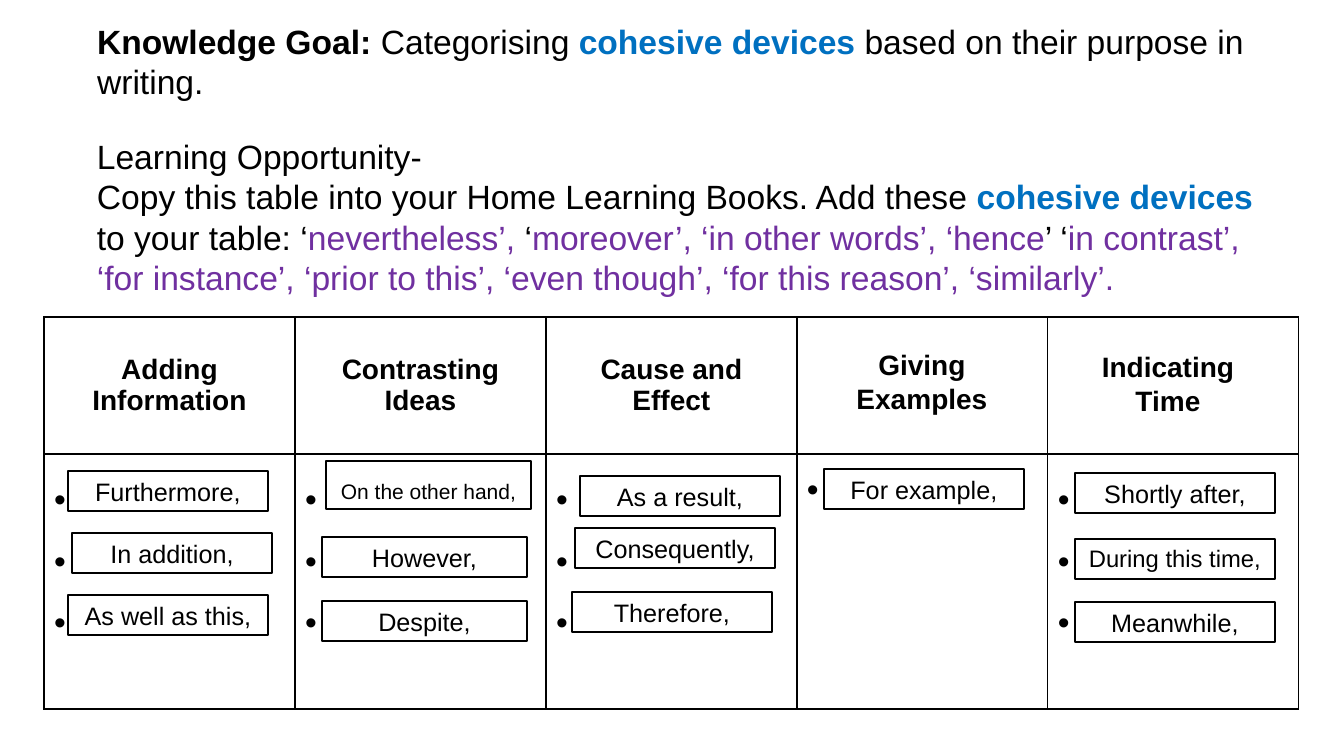
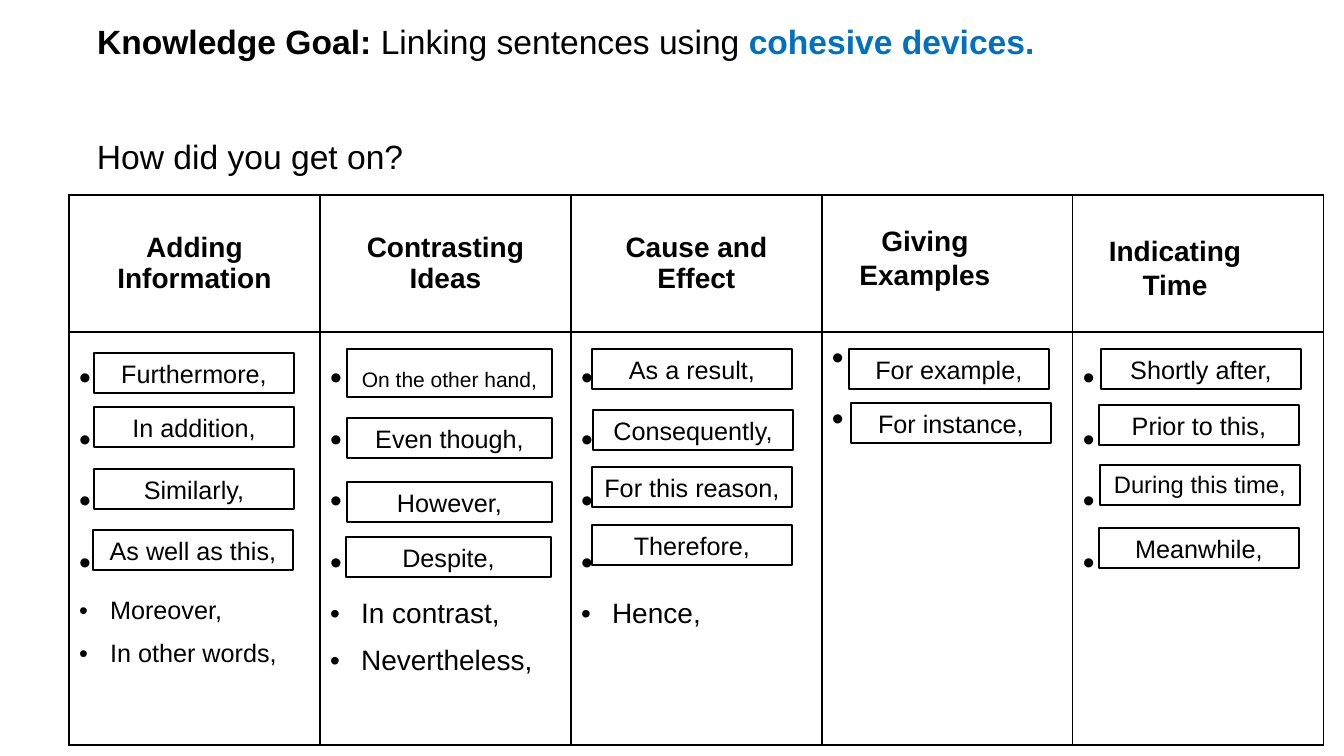
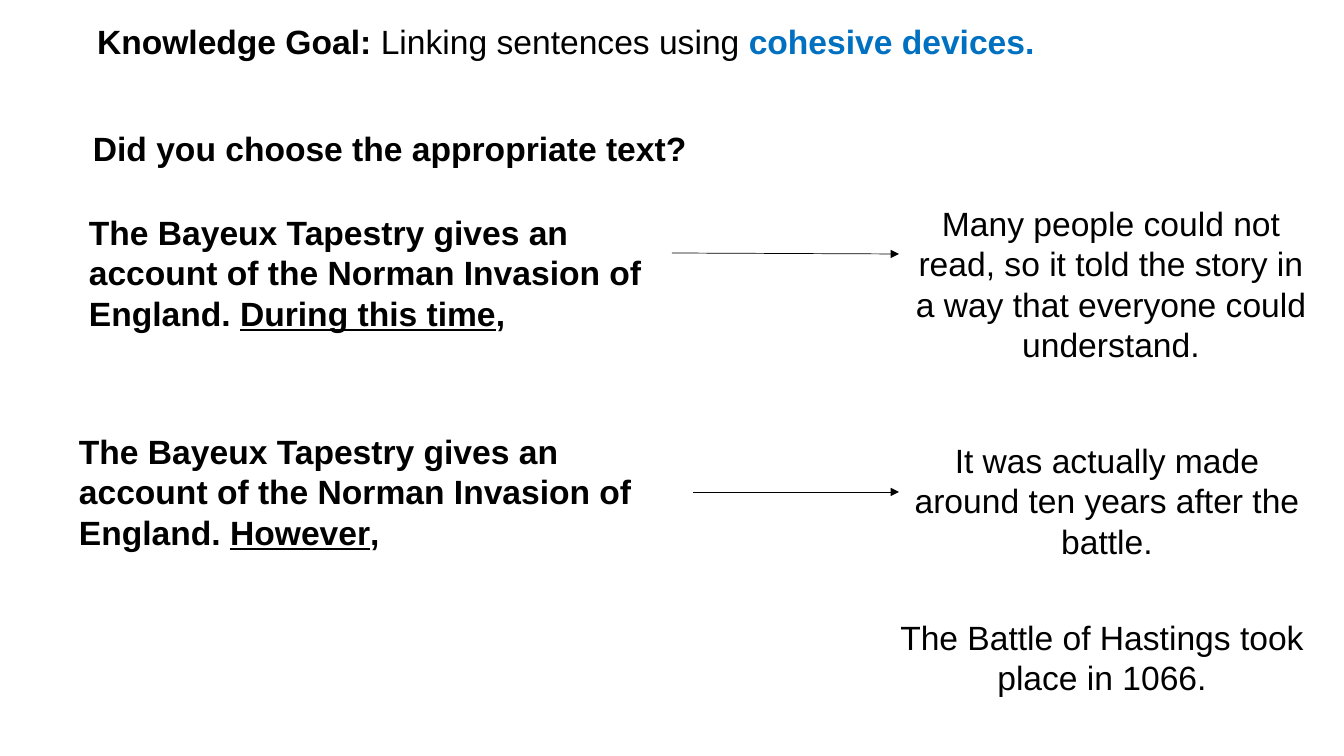
from lxml import etree
from pptx import Presentation
from pptx import util as u
from pptx.dml.color import RGBColor
from pptx.enum import shapes, text
from pptx.oxml.ns import qn

PX = 12192000 / 1344
COLORS = {"black": "000000", "white": "FFFFFF", "blue": "0070C0", "purple": "7030A0"}
FONT = "Arial"
BODY = 24
COLUMN, HEADER_ROW = 251, 137
HEADERS = ["Adding Information", "Contrasting Ideas", "Cause and\vEffect", "", ""]
WIDTHS = [200, 205, 200, 200, 200]
DEVICE_SIZES = {"On the other hand,": 15, "During this time,": 17}
BLUE = {"color": "blue", "bold": True}
PURPLE = {"color": "purple"}
LINKING_GOAL = [("Linking sentences using ", {}), ("cohesive devices.", BLUE)]


def px(n):
    return u.Emu(round(n * PX))


def box(*lengths):
    return [px(n) for n in lengths]


def rgb(name):
    return RGBColor.from_string(COLORS[name])


def style(font, size=None, name=None, color=None, bold=None, underline=None):
    if size:
        font.size = u.Pt(size)
    if name:
        font.name = name
    if color:
        font.color.rgb = rgb(color)
    if bold is not None:
        font.bold = bold
    if underline:
        font.underline = True


def write(p, runs, size=BODY, name=FONT, bold=False, align=text.PP_ALIGN.LEFT, spacing=None):
    p.alignment = align
    if spacing:
        p.line_spacing = spacing
    style(p.font, size, name, "black", bold)
    if isinstance(runs, str):
        p.text = runs
        return
    for words, changes in runs:
        r = p.add_run()
        r.text = words
        style(r.font, **changes)


def write_all(tf, paragraphs, **options):
    for i, runs in enumerate(paragraphs):
        write(tf.add_paragraph() if i else tf.paragraphs[0], runs, **options)


def add_goal(prs, runs, height=50):
    s = prs.slides.add_slide(prs.slide_layouts[5])
    sp = s.shapes.title
    sp.left, sp.top, sp.width, sp.height = box(87, 16, 1237, height)
    tf = sp.text_frame
    tf.word_wrap = True
    tf.auto_size = text.MSO_AUTO_SIZE.NONE
    tf.vertical_anchor = text.MSO_ANCHOR.TOP
    write(tf.paragraphs[0], [("Knowledge Goal: ", {"bold": True})] + runs)
    return s


def add_text(s, at, paragraphs, wrap=True, **options):
    tf = s.shapes.add_textbox(*box(*at)).text_frame
    tf.word_wrap = wrap
    tf.auto_size = text.MSO_AUTO_SIZE.SHAPE_TO_FIT_TEXT
    write_all(tf, paragraphs, **options)


def add_device(s, words, x, y, width):
    size = DEVICE_SIZES.get(words, 18)
    spaced = size == 15
    sp = s.shapes.add_shape(shapes.MSO_SHAPE.RECTANGLE, *box(x, y, width, 48 if spaced else 40))
    sp.shadow.inherit = False
    sp.fill.solid()
    sp.fill.fore_color.rgb = rgb("white")
    sp.line.color.rgb = rgb("black")
    sp.line.width = u.Pt(1)
    tf = sp.text_frame
    tf.word_wrap = True
    tf.auto_size = text.MSO_AUTO_SIZE.SHAPE_TO_FIT_TEXT
    tf.vertical_anchor = text.MSO_ANCHOR.TOP
    write(tf.paragraphs[0], words, size, align=text.PP_ALIGN.CENTER,
          spacing=1.5 if spaced else None)


def format_cell(cell):
    tc_pr = cell._tc.get_or_add_tcPr()
    for side in ("a:lnL", "a:lnR", "a:lnT", "a:lnB"):
        ln = etree.SubElement(tc_pr, qn(side), w=str(u.Pt(1)))
        fill = etree.SubElement(ln, qn("a:solidFill"))
        etree.SubElement(fill, qn("a:srgbClr"), val=COLORS["black"])
    cell.fill.solid()
    cell.fill.fore_color.rgb = rgb("white")


def add_bullet(p):
    p_pr = p._p.get_or_add_pPr()
    p_pr.set("marL", str(px(31)))
    p_pr.set("indent", str(-px(31)))
    etree.SubElement(p_pr, qn("a:buFont"), typeface=FONT)
    etree.SubElement(p_pr, qn("a:buChar"), char="•")


def fill_list(cell, count, extras, extra_size, first_spacing):
    tf = cell.text_frame
    for i, words in enumerate([" "] * count + extras):
        p = tf.add_paragraph() if i else tf.paragraphs[0]
        add_bullet(p)
        size, name = (BODY, "Calibri") if i < count else (extra_size, FONT)
        write(p, words, size, name, spacing=1.5 if i else first_spacing)


def add_device_table(s, left, top, list_row, columns, labels, extras, example_spacing):
    frame = s.shapes.add_table(2, len(columns), *box(left, top, COLUMN * len(columns),
                                                     HEADER_ROW + list_row))
    table = frame.table
    table.first_row = table.horz_banding = False
    for row, height in zip(table.rows, (HEADER_ROW, list_row)):
        row.height = px(height)
    for i, devices in enumerate(columns):
        table.columns[i].width = px(COLUMN)
        head, body = table.cell(0, i), table.cell(1, i)
        format_cell(head)
        format_cell(body)
        head.vertical_anchor = text.MSO_ANCHOR.MIDDLE
        if HEADERS[i]:
            write(head.text_frame.paragraphs[0], HEADERS[i], 20, bold=True,
                  align=text.PP_ALIGN.CENTER)
        words, size = extras.get(i, ([], None))
        fill_list(body, len(devices), words, size, example_spacing if i == 3 else 1.5)
    for devices, width in zip(columns, WIDTHS):
        for device in devices:
            add_device(s, *device, width)
    for (x, y, width), lines in zip(labels, (["Giving", "Examples"], ["Indicating", "Time"])):
        add_text(s, (x, y, width, 78), lines, wrap=False, size=20, bold=True,
                 align=text.PP_ALIGN.CENTER)


def add_arrow(s, x1, y1, x2, y2):
    c = s.shapes.add_connector(shapes.MSO_CONNECTOR.STRAIGHT, *box(x1, y1, x2, y2))
    c.line.color.rgb = rgb("black")
    c.line.width = u.Pt(0.5)
    etree.SubElement(c.line._get_or_add_ln(), qn("a:tailEnd"), type="triangle")
    etree.SubElement(c._element.spPr, qn("a:effectLst"))


def categorising_slide(prs):
    s = add_goal(prs, [("Categorising ", {}), ("cohesive devices ", BLUE),
                       ("based on their purpose in writing.", {})], 92)
    add_device_table(s, 44, 317, 255, [
        [("Furthermore,", 68, 471), ("In addition,", 72, 533), ("As well as this,", 68, 595)],
        [("On the other hand,", 326, 461), ("However,", 322, 537), ("Despite,", 322, 601)],
        [("As a result,", 580, 476), ("Consequently,", 575, 528), ("Therefore,", 572, 592)],
        [("For example,", 824, 469)],
        [("Shortly after,", 1075, 473), ("During this time,", 1075, 539),
         ("Meanwhile,", 1075, 602)],
    ], [(846, 343, 152), (1091, 345, 154)], {}, 1.25)
    add_text(s, (87, 131, 1213, 173), ["Learning Opportunity-", [
        ("Copy this table into your Home Learning Books. Add these ", {}),
        ("cohesive devices ", BLUE),
        ("to your table: ‘", {}),
        ("nevertheless’, ", PURPLE),
        ("‘", {}),
        ("moreover’, ‘in other words’, ‘hence", PURPLE),
        ("’ ‘", {}),
        ("in contrast’, ‘for instance’, ‘prior to this’, ‘even though’, "
         "‘for this reason’, ‘similarly’.", PURPLE),
    ]])


def answers_slide(prs):
    s = add_goal(prs, LINKING_GOAL)
    add_device_table(s, 69, 195, 413, [
        [("Furthermore,", 94, 353), ("In addition,", 94, 407), ("Similarly,", 94, 469),
         ("As well as this,", 93, 530)],
        [("On the other hand,", 347, 349), ("Even though,", 347, 418), ("However,", 347, 482),
         ("Despite,", 346, 537)],
        [("As a result,", 592, 349), ("Consequently,", 593, 410), ("For this reason,", 592, 467),
         ("Therefore,", 592, 525)],
        [("For example,", 849, 349), ("For instance,", 851, 403)],
        [("Shortly after,", 1101, 349), ("Prior to this,", 1099, 405),
         ("During this time,", 1100, 465), ("Meanwhile,", 1099, 528)],
    ], [(849, 219, 152), (1098, 229, 154)], {
        0: (["Moreover,", "In other words,"], 18),
        1: (["In contrast,", "Nevertheless,"], 20),
        2: (["Hence,"], 20),
    }, 1.0)
    add_text(s, (87, 131, 1213, 50), ["How did you get on?"])


def matching_slide(prs):
    s = add_goal(prs, LINKING_GOAL)
    add_text(s, (83, 123, 1162, 50), ["Did you choose the appropriate text?"], bold=True)
    for at, device in (((79, 207, 636, 132), "During this time"),
                       ((69, 426, 595, 132), "However")):
        add_text(s, at, [[
            ("The Bayeux Tapestry gives an account of the Norman Invasion of England. ", {}),
            (device, {"underline": True}), (",", {})]], bold=True)
    for at, words in (
        ((899, 198, 424, 173), "Many people could not read, so it told the story in a way "
                               "that everyone could understand."),
        ((895, 435, 424, 132), "It was actually made around ten years after the battle."),
        ((890, 612, 424, 92), "The Battle of Hastings took place in 1066."),
    ):
        add_text(s, at, [words], align=text.PP_ALIGN.CENTER)
    add_arrow(s, 672, 253, 899, 254)
    add_arrow(s, 693, 492, 899, 492)


def main():
    prs = Presentation()
    prs.slide_width, prs.slide_height = box(1344, 756)
    categorising_slide(prs)
    answers_slide(prs)
    matching_slide(prs)
    prs.save("out.pptx")


if __name__ == "__main__":
    main()
